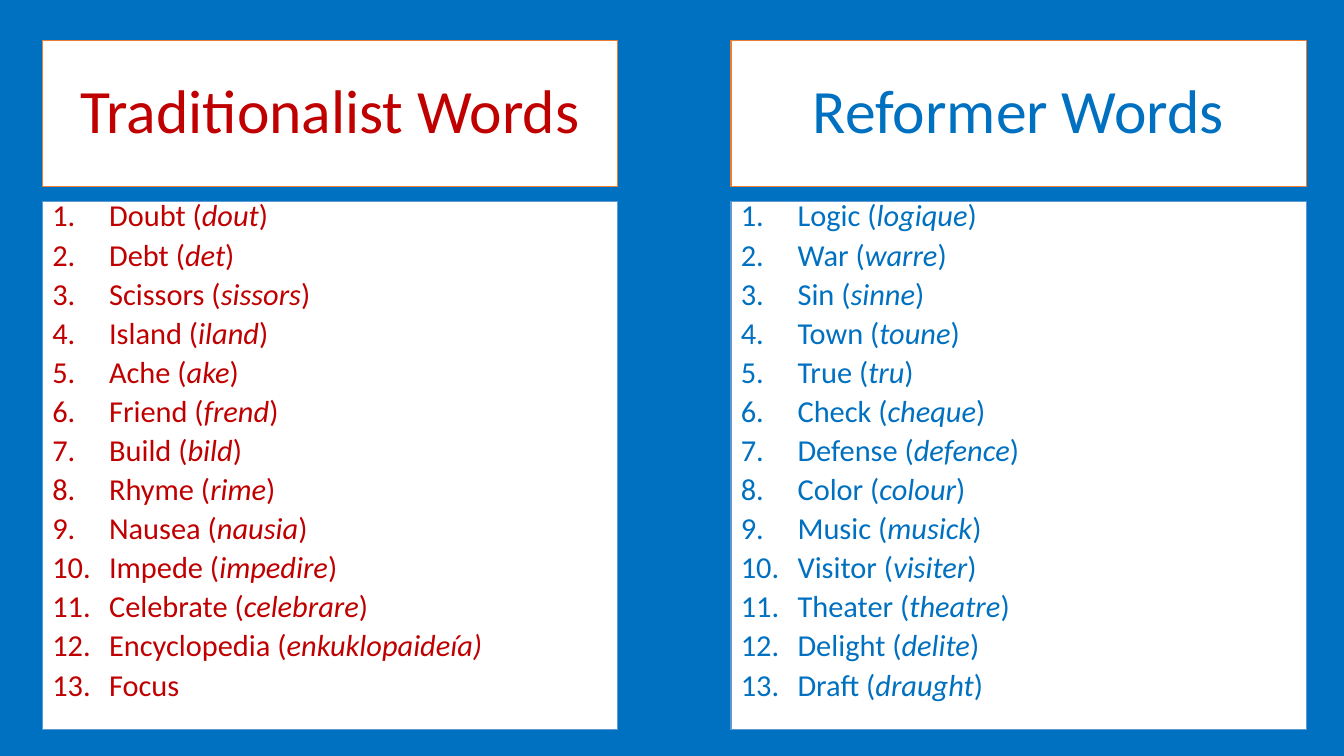
import pptx
import pptx.dml.color
import pptx.enum.shapes
import pptx.enum.text
import pptx.oxml
import pptx.oxml.ns
import pptx.util

Cm = pptx.util.Cm
Pt = pptx.util.Pt

BLUE = "0070C0"
RED = "C00000"
WHITE = "FFFFFF"
TITLE_EDGE = "ED7D31"
LIST_EDGE = "5B9BD5"

WIDTH = 14.5
INDENT = 1.43

# Text between asterisks is italic.
OLD_WORDS = [
    "Doubt (*dout*)", "Debt (*det*)", "Scissors (*sissors*)",
    "Island (*iland*)", "Ache (*ake*)", "Friend (*frend*)",
    "Build (*bild*)", "Rhyme (*rime*)", "Nausea (*nausia*)",
    "Impede (*impedire*)", "Celebrate (*celebrare*)",
    "Encyclopedia (*enkuklopaideía)*", "Focus",
]
NEW_WORDS = [
    "Logic (*logique*)", "War (*warre*)", "Sin (*sinne*)",
    "Town (*toune*)", "True (*tru*)", "Check (*cheque*)",
    "Defense (*defence*)", "Color (*colour*)", "Music (*musick*)",
    "Visitor (*visiter*)", "Theater (*theatre*)",
    "Delight (*delite*)", "Draft (*draught*)",
]


def paint(fill, color):
    fill.solid()
    fill.fore_color.rgb = pptx.dml.color.RGBColor.from_string(color)


def add_panel(slide, left, top, height, edge, anchor):
    """Add a white box and return its text frame."""
    panel = slide.shapes.add_shape(
        pptx.enum.shapes.MSO_SHAPE.RECTANGLE,
        Cm(left), Cm(top), Cm(WIDTH), Cm(height))
    panel.shadow.inherit = False
    paint(panel.fill, WHITE)
    paint(panel.line.fill, edge)
    panel.line.width = Pt(1)
    frame = panel.text_frame
    frame.word_wrap = True
    frame.vertical_anchor = anchor
    return frame


def style(para, size, color, align, spacing):
    para.alignment = align
    para.line_spacing = spacing
    para.font.name = "Calibri"
    para.font.size = Pt(size)
    paint(para.font.fill, color)


def number(para):
    props = para._p.get_or_add_pPr()
    props.set("marL", str(Cm(INDENT)))
    props.set("indent", str(-Cm(INDENT)))
    for tag, key, value in (("buFont", "typeface", "+mj-lt"),
                            ("buAutoNum", "type", "arabicPeriod")):
        item = pptx.oxml.parse_xml(
            f'<a:{tag} {pptx.oxml.ns.nsdecls("a")} {key}="{value}"/>')
        props.append(item)


def add_title(slide, left, text, color):
    frame = add_panel(slide, left, 1.02, 3.68, TITLE_EDGE,
                      pptx.enum.text.MSO_ANCHOR.MIDDLE)
    para = frame.paragraphs[0]
    para.add_run().text = text
    style(para, 44, color, pptx.enum.text.PP_ALIGN.CENTER, 0.9)


def add_list(slide, left, words, color):
    frame = add_panel(slide, left, 5.08, 13.31, LIST_EDGE,
                      pptx.enum.text.MSO_ANCHOR.TOP)
    for row, word in enumerate(words):
        para = frame.add_paragraph() if row else frame.paragraphs[0]
        number(para)
        for part, text in enumerate(word.split("*")):
            if text:
                run = para.add_run()
                run.text = text
                if part % 2:
                    run.font.italic = True
        style(para, 21.7, color, pptx.enum.text.PP_ALIGN.LEFT, 0.7)
        if row:
            para.space_before = Pt(9.7)


def main():
    deck = pptx.Presentation()
    deck.slide_width = Cm(33.87)
    deck.slide_height = Cm(19.05)
    slide = deck.slides.add_slide(deck.slide_layouts[6])
    paint(slide.background.fill, BLUE)
    for left, title, words, color in (
            (1.07, "Traditionalist Words", OLD_WORDS, RED),
            (18.42, "Reformer Words", NEW_WORDS, BLUE)):
        add_title(slide, left, title, color)
        add_list(slide, left, words, color)
    deck.save("out.pptx")


if __name__ == "__main__":
    main()
